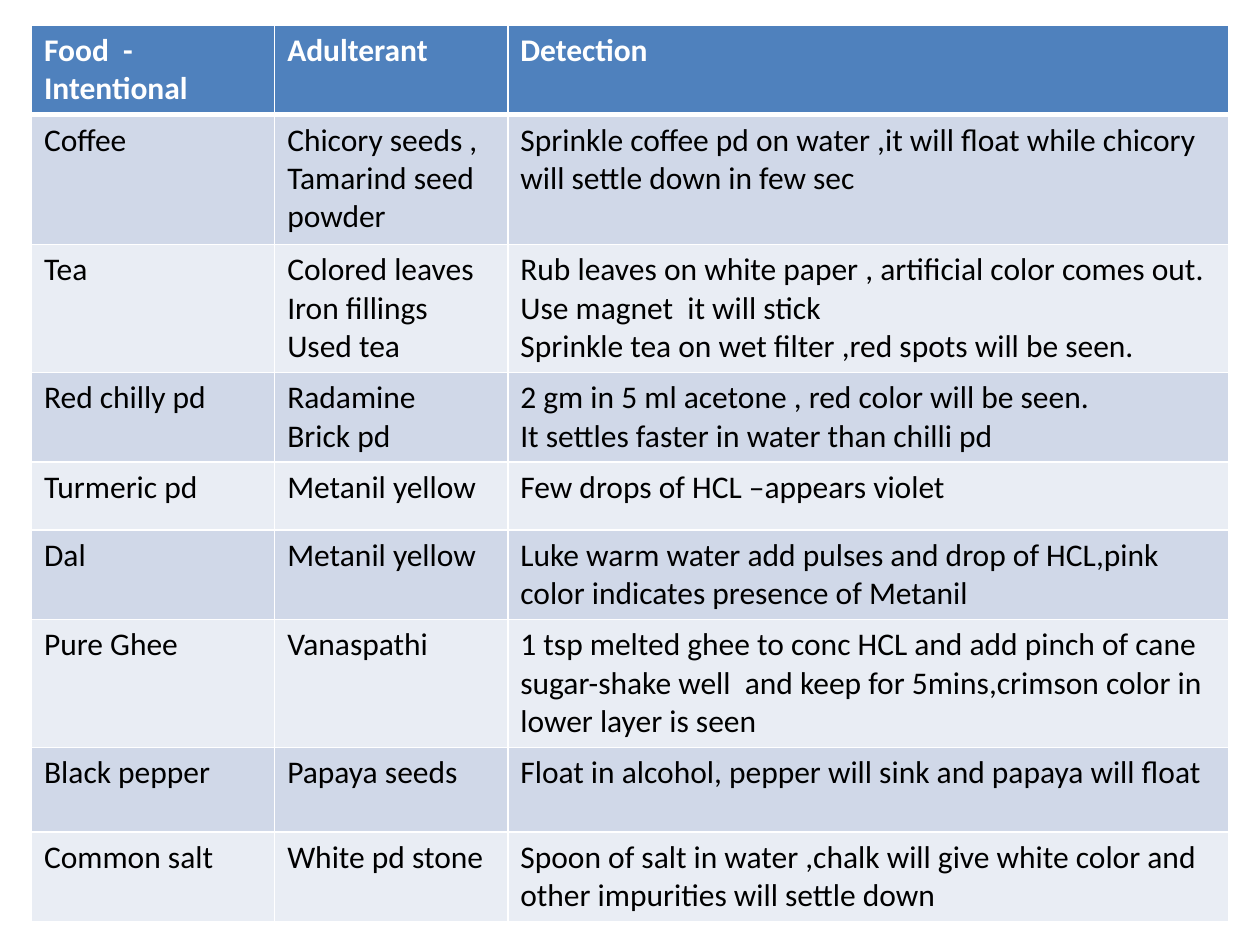
from dataclasses import dataclass

from lxml import etree
from pptx import Presentation
from pptx import util as u
from pptx.dml import color
from pptx.oxml import ns


@dataclass(frozen=True)
class Theme:
    font: str = "Calibri"
    size: float = 18
    header_fill: str = "4F81BD"
    band_fills: tuple[str, str] = ("D0D8E8", "E9EDF4")
    header_text: str = "FFFFFF"
    body_text: str = "000000"
    rule: str = "FFFFFF"
    thin: float = 1
    thick: float = 3


@dataclass(frozen=True)
class FoodTest:
    food: str
    adulterant: str
    detection: str
    height: float  # inches


THEME = Theme()
SLIDE_WIDTH, SLIDE_HEIGHT = 10, 7.5
LEFT, TOP = 0.25, 0.2
COLUMN_WIDTHS = (1.93, 1.85, 5.72)

ROWS = (
    FoodTest("Food  - Intentional", "Adulterant", "Detection", 0.71),
    FoodTest("Coffee", "Chicory seeds , Tamarind seed powder",
             "Sprinkle coffee pd on water ,it will float while chicory "
             "will settle down in few sec", 1.03),
    FoodTest("Tea", "Colored leaves\nIron fillings\nUsed tea",
             "Rub leaves on white paper , artificial color comes out.\n"
             "Use magnet  it will stick\n"
             "Sprinkle tea on wet filter ,red spots will be seen.", 1.01),
    FoodTest("Red chilly pd", "Radamine\nBrick pd",
             "2 gm in 5 ml acetone , red color will be seen.\n"
             "It settles faster in water than chilli pd", 0.71),
    FoodTest("Turmeric pd", "Metanil yellow",
             "Few drops of HCL –appears violet", 0.54),
    FoodTest("Dal", "Metanil yellow",
             "Luke warm water add pulses and drop of HCL,pink color "
             "indicates presence of Metanil", 0.71),
    FoodTest("Pure Ghee", "Vanaspathi",
             "1 tsp melted ghee to conc HCL and add pinch of cane "
             "sugar-shake well  and keep for 5mins,crimson color in "
             "lower layer is seen", 1.01),
    FoodTest("Black pepper", "Papaya seeds",
             "Float in alcohol, pepper will sink and papaya will float", 0.67),
    FoodTest("Common salt", "White pd stone",
             "Spoon of salt in water ,chalk will give white color and "
             "other impurities will settle down", 0.67),
)


def draw_border(cell, side: str, width: float) -> None:
    """Add one cell edge; edges must come before the cell's fill."""
    properties = cell._tc.get_or_add_tcPr()
    line = etree.SubElement(properties, ns.qn(f"a:ln{side}"), w=str(u.Pt(width)))
    fill = etree.SubElement(line, ns.qn("a:solidFill"))
    etree.SubElement(fill, ns.qn("a:srgbClr"), val=THEME.rule)


def write_cell(cell, text: str, *, fill: str, ink: str, bold: bool,
               top: float, bottom: float) -> None:
    """Write text into a cell and give it edges, fill and font."""
    for side, width in (("L", THEME.thin), ("R", THEME.thin),
                        ("T", top), ("B", bottom)):
        draw_border(cell, side, width)
    cell.fill.solid()
    cell.fill.fore_color.rgb = color.RGBColor.from_string(fill)
    cell.text_frame.text = text
    for para in cell.text_frame.paragraphs:
        for span in para.runs:
            span.font.name = THEME.font
            span.font.size = u.Pt(THEME.size)
            span.font.bold = bold
            span.font.color.rgb = color.RGBColor.from_string(ink)


def draw_table(page, rows: tuple[FoodTest, ...]) -> None:
    """Draw a header row followed by banded rows."""
    table = page.shapes.add_table(
        len(rows), len(COLUMN_WIDTHS), u.Inches(LEFT), u.Inches(TOP),
        u.Inches(sum(COLUMN_WIDTHS)),
        u.Inches(sum(row.height for row in rows))).table
    for column, width in zip(table.columns, COLUMN_WIDTHS):
        column.width = u.Inches(width)
    for index, row in enumerate(rows):
        header = index == 0
        table.rows[index].height = u.Inches(row.height)
        for column, text in enumerate((row.food, row.adulterant, row.detection)):
            write_cell(
                table.cell(index, column), text,
                fill=THEME.header_fill if header
                else THEME.band_fills[(index - 1) % 2],
                ink=THEME.header_text if header else THEME.body_text,
                bold=header,
                top=THEME.thick if index == 1 else THEME.thin,
                bottom=THEME.thick if header else THEME.thin)


def main() -> None:
    deck = Presentation()
    deck.slide_width = u.Inches(SLIDE_WIDTH)
    deck.slide_height = u.Inches(SLIDE_HEIGHT)
    # Blank layout: the table fills the page
    page = deck.slides.add_slide(deck.slide_layouts[6])
    draw_table(page, ROWS)
    deck.save("out.pptx")


if __name__ == "__main__":
    main()
